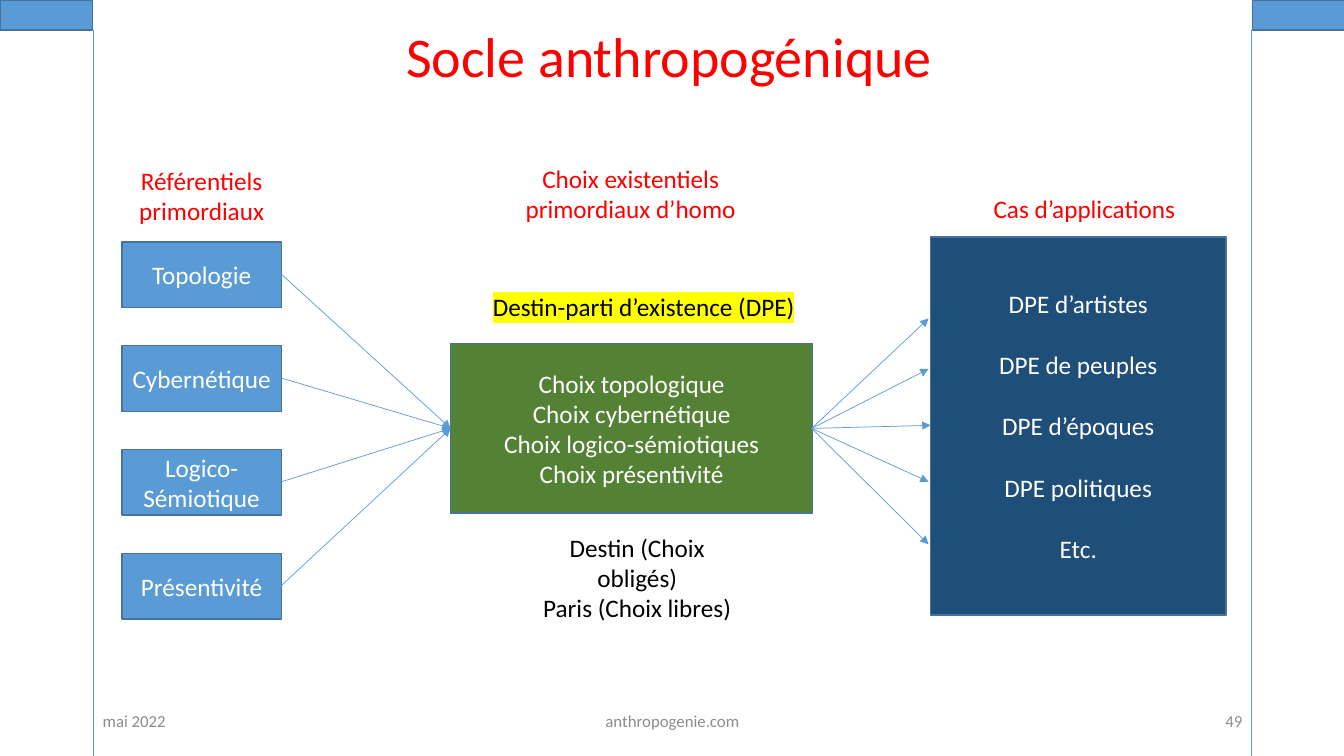
from lxml import etree
from pptx import Presentation
from pptx import util as u
from pptx.dml.color import RGBColor
from pptx.enum import shapes, text
from pptx.oxml import ns

PX = 9144  # EMU per px, 100 px to the inch

BLUE = RGBColor(0x5B, 0x9B, 0xD5)
EDGE = RGBColor(0x43, 0x73, 0x9E)
NAVY = RGBColor(0x1F, 0x4E, 0x79)
GREEN = RGBColor(0x54, 0x82, 0x35)
RED = RGBColor(0xFF, 0x00, 0x00)
GREY = RGBColor(0x8C, 0x8C, 0x8C)
BLACK = RGBColor(0x00, 0x00, 0x00)
WHITE = RGBColor(0xFF, 0xFF, 0xFF)
YELLOW = RGBColor(0xFF, 0xFF, 0x00)

LEFT, CENTER, RIGHT = text.PP_ALIGN.LEFT, text.PP_ALIGN.CENTER, text.PP_ALIGN.RIGHT
TOP, MIDDLE = text.MSO_ANCHOR.TOP, text.MSO_ANCHOR.MIDDLE


def px(*lengths):
    return [u.Emu(length * PX) for length in lengths]


def add_xml(parent, tag, **attributes):
    return etree.SubElement(parent, ns.qn(tag), attributes)


class Board:
    font = {"name": "Calibri", "size": u.Pt(18)}

    def __init__(self, page):
        self.page = page

    def set_text(self, shape, lines, color, size=18, align=CENTER, anchor=TOP,
                 wrap=True, gap=0, highlight=None):
        """Fill a shape with one paragraph per line; gap is the points between them."""
        frame = shape.text_frame
        frame.word_wrap = wrap
        frame.vertical_anchor = anchor
        for number, line in enumerate(lines):
            para = frame.add_paragraph() if number else frame.paragraphs[0]
            para.alignment = align
            if number and gap:
                para.space_before = u.Pt(gap)
            span = para.add_run()
            span.text = line
            for key, value in {**self.font, "size": u.Pt(size)}.items():
                setattr(span.font, key, value)
            span.font.color.rgb = color
            if highlight:
                solid = span._r.rPr.find(ns.qn("a:solidFill"))
                mark = add_xml(span._r.rPr, "a:highlight")
                add_xml(mark, "a:srgbClr", val=str(highlight))
                solid.addnext(mark)

    def label(self, place, lines, color, **style):
        box = self.page.shapes.add_textbox(*px(*place))
        self.set_text(box, lines, color, **style)

    def block(self, place, fill, lines=(), **style):
        box = self.page.shapes.add_shape(shapes.MSO_SHAPE.RECTANGLE, *px(*place))
        box.shadow.inherit = False
        box.fill.solid()
        box.fill.fore_color.rgb = fill
        box.line.color.rgb = EDGE
        box.line.width = u.Pt(1)
        self.set_text(box, lines, WHITE, anchor=MIDDLE, **style)

    def line(self, start, end, arrow=False):
        link = self.page.shapes.add_connector(
            shapes.MSO_CONNECTOR.STRAIGHT, *px(*start, *end))
        link.line.color.rgb = BLUE
        link.line.width = u.Pt(0.5)
        properties = link._element.spPr
        if arrow:
            add_xml(properties.find(ns.qn("a:ln")), "a:tailEnd", type="triangle")
        add_xml(properties, "a:effectLst")


def main():
    deck = Presentation()
    deck.slide_width, deck.slide_height = px(1333, 750)
    board = Board(deck.slides.add_slide(deck.slide_layouts[6]))

    for left, width, words, align in (
            (92, 300, "mai 2022", LEFT),
            (442, 450, "anthropogenie.com", CENTER),
            (942, 300, "49", RIGHT)):
        board.label((left, 695, width, 40), [words], GREY,
                    size=12, align=align, anchor=MIDDLE)

    board.label((393, 16, 547, 77), ["Socle anthropogénique"], RED,
                size=40, align=LEFT, wrap=False)

    # Left column: the four frames of reference
    references = (["Topologie"], ["Cybernétique"],
                  ["Logico-", "Sémiotique"], ["Présentivité"])
    for row, words in enumerate(references):
        board.block((121, 240 + 103 * row, 158, 65), BLUE, words)

    # Middle column: the choices
    board.block((447, 341, 359, 168), GREEN,
                ["Choix topologique", "Choix cybernétique",
                 "Choix logico-sémiotiques", "Choix présentivité"])
    board.label((479, 284, 323, 40), ["Destin-parti d’existence (DPE)"], BLACK,
                align=LEFT, wrap=False, highlight=YELLOW)
    board.label((517, 523, 230, 71),
                ["Destin (Choix obligés)", "Paris (Choix libres)"], BLACK)

    # Right column: the applications
    board.block((923, 235, 293, 375), NAVY,
                ["DPE d’artistes", "DPE de peuples", "DPE d’époques",
                 "DPE politiques", "Etc."], gap=22)

    for place, heading in (
            ((121, 159, 158, 71), ["Référentiels primordiaux"]),
            ((497, 157, 257, 71), ["Choix existentiels", "primordiaux d’homo"]),
            ((947, 187, 257, 40), ["Cas d’applications"])):
        board.label(place, heading, RED)

    for row in range(len(references)):
        board.line((279, 272 + 103 * row), (447, 425), arrow=True)
    for target in ((921, 316), (921, 366), (923, 422), (921, 478), (921, 540)):
        board.line((805, 425), target, arrow=True)

    # Side margins
    for tab, edge in ((0, 93), (1242, 1241)):
        board.block((tab, 0, 92, 30), BLUE)
        board.line((edge, 30), (edge, 750))

    deck.save("out.pptx")


if __name__ == "__main__":
    main()
